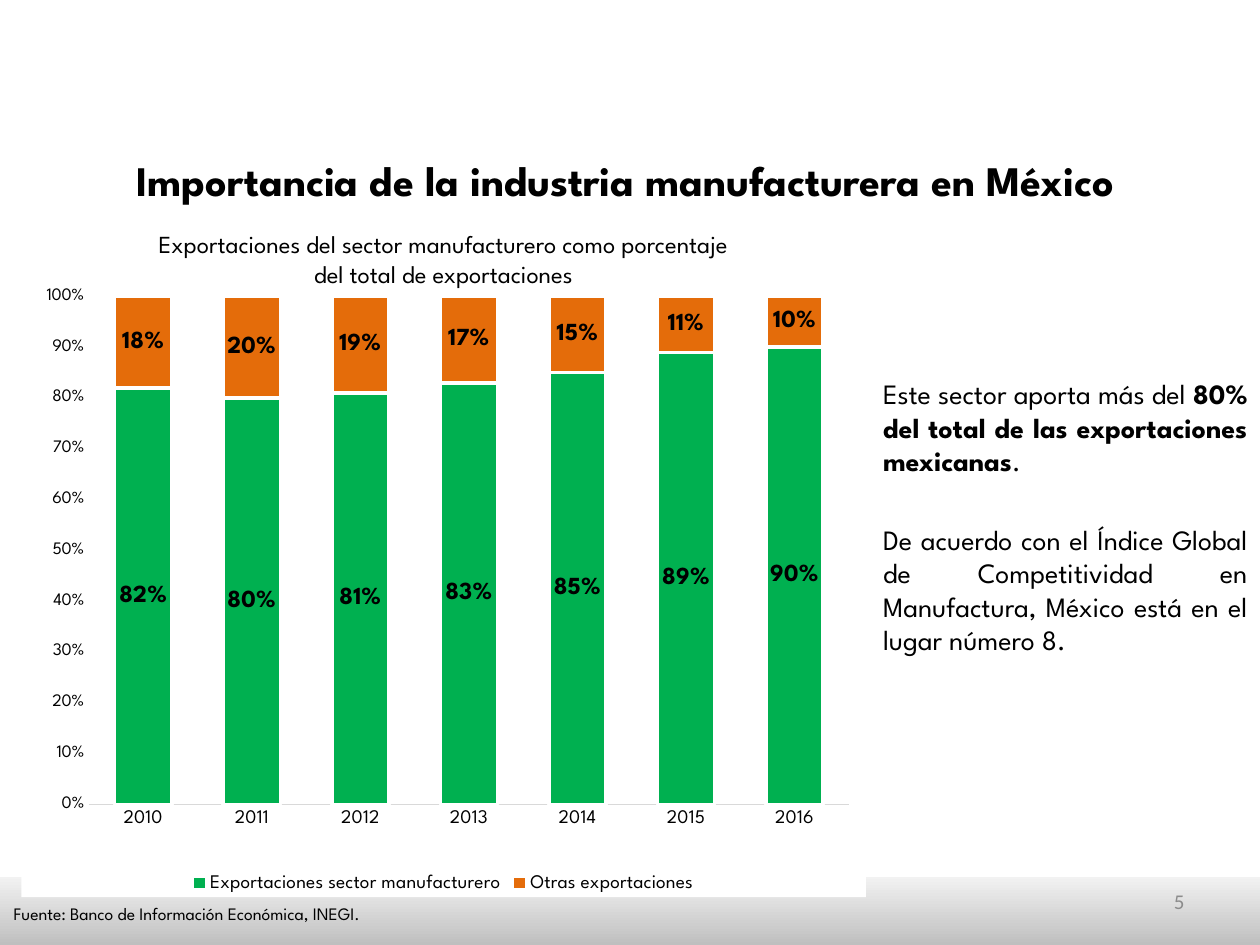
from lxml import etree
from pptx import Presentation
from pptx import util as u
from pptx.chart import data
from pptx.dml.color import RGBColor
from pptx.enum import chart as ch, shapes, text
from pptx.oxml import parse_xml
from pptx.oxml.ns import nsdecls, qn

Pt = u.Pt
BLACK = RGBColor(0, 0, 0)
WHITE = RGBColor(255, 255, 255)
GREEN = RGBColor(0, 0xB0, 0x50)
ORANGE = RGBColor(0xE4, 0x6C, 0x0A)
GRAY = RGBColor(0x8C, 0x8C, 0x8C)
AXIS = RGBColor(0xD9, 0xD9, 0xD9)
BAND_DARK = RGBColor(0xBF, 0xBF, 0xBF)
BAND_LIGHT = RGBColor(0xF2, 0xF2, 0xF2)
FONT = "League Spartan"
A = text.PP_ALIGN

TITLE = [[("Importancia de la industria manufacturera en México", True)]]
SUBTITLE = [
    [("Exportaciones del sector manufacturero como porcentaje", False)],
    [("del total de exportaciones", False)],
]
POINTS = [
    [("Este sector aporta más del ", False),
     ("80% del total de las exportaciones mexicanas", True),
     (".", False)],
    [("De acuerdo con el Índice Global de Competitividad en Manufactura, "
      "México está en el lugar número 8.", False)],
]
SOURCE = [[("Fuente: Banco de Información Económica, INEGI.", False)]]
NUMBER = [[("5", False)]]

YEARS = [str(year) for year in range(2010, 2017)]
SERIES = [
    ("Exportaciones sector manufacturero", GREEN,
     (0.82, 0.80, 0.81, 0.83, 0.85, 0.89, 0.90)),
    ("Otras exportaciones", ORANGE,
     (0.18, 0.20, 0.19, 0.17, 0.15, 0.11, 0.10)),
]
PLOT = {"x": 0.08, "y": 0.035, "w": 0.9, "h": 0.816}


def add_text(s, box, paragraphs, size, align, font=FONT, color=BLACK,
             bullet=False, gap=0, anchor=text.MSO_ANCHOR.TOP):
    tf = s.shapes.add_textbox(*map(Pt, box)).text_frame
    tf.word_wrap = True
    tf.vertical_anchor = anchor
    for i, runs in enumerate(paragraphs):
        p = tf.add_paragraph() if i else tf.paragraphs[0]
        p.alignment = align
        if i and gap:
            p.space_before = Pt(gap)
        if bullet:
            pPr = p._p.get_or_add_pPr()
            pPr.set("marL", str(Pt(16.5)))
            pPr.set("indent", str(-Pt(16.5)))
            etree.SubElement(pPr, qn("a:buFont")).set("typeface", "Arial")
            etree.SubElement(pPr, qn("a:buChar")).set("char", "•")
        for words, bold in runs:
            r = p.add_run()
            r.text = words
            r.font.name = font
            r.font.size = Pt(size)
            r.font.bold = bold
            r.font.color.rgb = color


def set_font(font, size, bold=False):
    font.name = FONT
    font.size = Pt(size)
    font.bold = bold
    font.color.rgb = BLACK


def add_band(s):
    band = s.shapes.add_shape(shapes.MSO_SHAPE.RECTANGLE,
                              0, Pt(501), Pt(720), Pt(39))
    band.shadow.inherit = False
    band.line.fill.background()
    band.fill.gradient()
    band.fill.gradient_angle = 90
    for stop, color in zip(band.fill.gradient_stops, (BAND_DARK, BAND_LIGHT)):
        stop.color.rgb = color


def add_export_chart(s):
    chart_data = data.CategoryChartData(number_format="0%")
    chart_data.categories = YEARS
    for name, _, values in SERIES:
        chart_data.add_series(name, values)
    chart = s.shapes.add_chart(ch.XL_CHART_TYPE.COLUMN_STACKED, Pt(12.25), Pt(157),
                               Pt(482.5), Pt(355.7), chart_data).chart
    set_font(chart.font, 10)
    chart.has_title = False
    chart.has_legend = True
    chart.legend.position = ch.XL_LEGEND_POSITION.BOTTOM
    chart.legend.include_in_layout = False
    set_font(chart.legend.font, 11)

    years, share = chart.category_axis, chart.value_axis
    for axis, size in ((years, 11), (share, 10)):
        axis.major_tick_mark = axis.minor_tick_mark = ch.XL_TICK_MARK.NONE
        axis.has_major_gridlines = False
        set_font(axis.tick_labels.font, size)
    years.format.line.color.rgb = AXIS
    years.format.line.width = Pt(0.75)
    share.format.line.fill.background()
    share.minimum_scale, share.maximum_scale, share.major_unit = 0, 1, 0.1
    share.tick_labels.number_format = "0%"
    share.tick_labels.number_format_is_linked = False

    plot = chart.plots[0]
    plot.gap_width, plot.overlap = 90, 100
    plot.vary_by_categories = False
    for series, (_, color, _) in zip(plot.series, SERIES):
        series.format.fill.solid()
        series.format.fill.fore_color.rgb = color
        series.format.line.color.rgb = WHITE
        series.format.line.width = Pt(2)
        labels = series.data_labels
        labels.show_value = True
        labels.number_format = "0%"
        labels.number_format_is_linked = False
        labels.position = ch.XL_LABEL_POSITION.CENTER
        set_font(labels.font, 14, True)

    root = chart._chartSpace
    area = root.find(qn("c:chart")).find(qn("c:plotArea"))
    for old in area.findall(qn("c:layout")):
        area.remove(old)
    rules = [("layoutTarget", "inner"), ("xMode", "edge"), ("yMode", "edge"),
             *PLOT.items()]
    inside = "".join(f'<c:{tag} val="{value}"/>' for tag, value in rules)
    area.insert(0, parse_xml(f'<c:layout {nsdecls("c")}><c:manualLayout>{inside}'
                             '</c:manualLayout></c:layout>'))
    root.find(qn("c:chart")).addnext(parse_xml(
        f'<c:spPr {nsdecls("c", "a")}><a:solidFill><a:srgbClr val="{WHITE}"/>'
        '</a:solidFill><a:ln><a:noFill/></a:ln></c:spPr>'))


def main():
    prs = Presentation()
    prs.slide_width, prs.slide_height = Pt(720), Pt(540)
    s = prs.slides.add_slide(prs.slide_layouts[6])
    add_band(s)
    add_text(s, (23.75, 85, 667.5, 40.3), TITLE, 24, A.CENTER)
    add_text(s, (481, 211.7, 239, 170), POINTS, 16, A.JUSTIFY, bullet=True, gap=25.5)
    add_export_chart(s)
    add_text(s, (1.5, 127.5, 504, 41), SUBTITLE, 14, A.CENTER)
    add_text(s, (0.7, 512.7, 380, 19.4), SOURCE, 10, A.LEFT)
    add_text(s, (516, 500.5, 168, 28.8), NUMBER, 12, A.RIGHT, font="Calibri",
             color=GRAY, anchor=text.MSO_ANCHOR.MIDDLE)
    prs.save("out.pptx")


if __name__ == "__main__":
    main()
